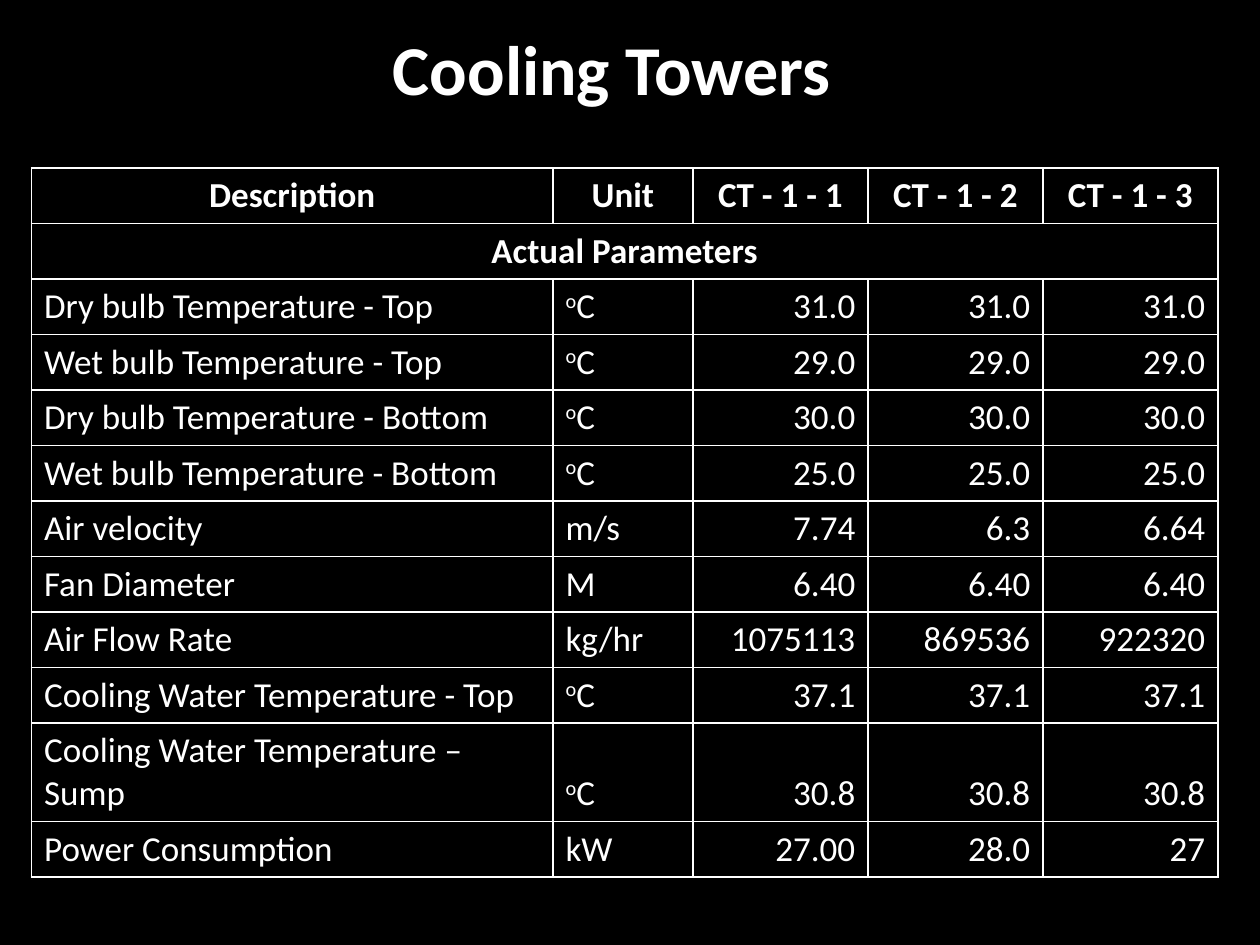
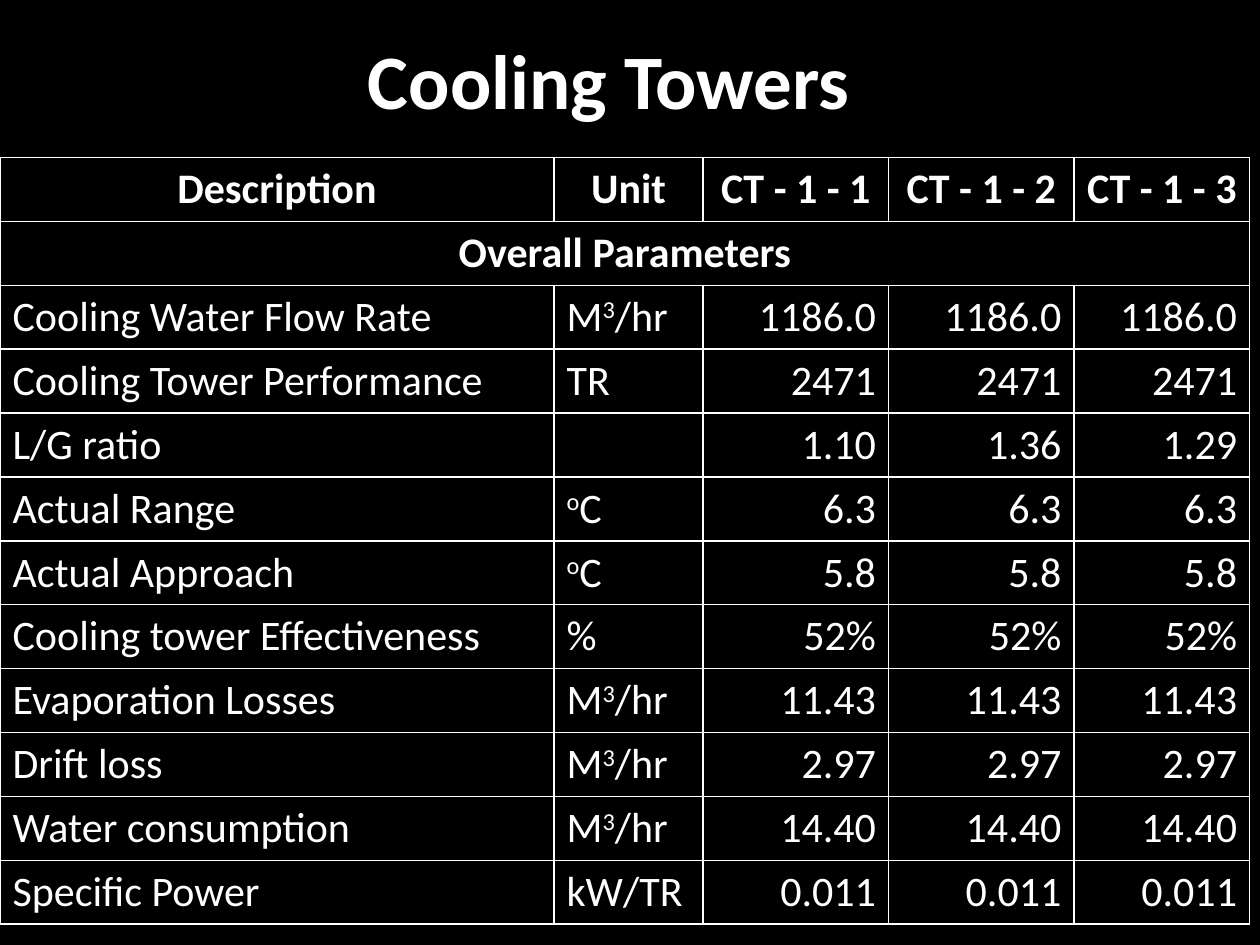
from lxml.etree import SubElement
from pptx import Presentation
from pptx.dml.color import RGBColor
from pptx.enum.text import MSO_ANCHOR as Anchor, MSO_AUTO_SIZE as AutoSize, PP_ALIGN as Align
from pptx.oxml.ns import qn
from pptx.util import Pt

# Shared look
FONT, INK, GROUND = "Calibri", "FFFFFF", "000000"
SLIDE_WIDTH, SLIDE_HEIGHT = 720, 540
TITLE_ONLY = 5
CELL_PADDING = 7.2
LINE_FACTOR = 1.22

# Table content: text between carets is superscript
HEADINGS = ["Description", "Unit", "CT - 1 - 1", "CT - 1 - 2", "CT - 1 - 3"]
DEGREES, VOLUME_RATE = "^o^C", "M^3^/hr"
ACTUAL = [
    ("Dry bulb Temperature - Top", DEGREES, "31.0", "31.0", "31.0"),
    ("Wet bulb Temperature - Top", DEGREES, "29.0", "29.0", "29.0"),
    ("Dry bulb Temperature - Bottom", DEGREES, "30.0", "30.0", "30.0"),
    ("Wet bulb Temperature - Bottom", DEGREES, "25.0", "25.0", "25.0"),
    ("Air velocity", "m/s", "7.74", "6.3", "6.64"),
    ("Fan Diameter", "M", "6.40", "6.40", "6.40"),
    ("Air Flow Rate", "kg/hr", "1075113", "869536", "922320"),
    ("Cooling Water Temperature - Top", DEGREES, "37.1", "37.1", "37.1"),
    ("Cooling Water Temperature –\nSump", DEGREES, "30.8", "30.8", "30.8"),
    ("Power Consumption", "kW", "27.00", "28.0", "27"),
]
OVERALL = [
    ("Cooling Water Flow Rate", VOLUME_RATE, "1186.0", "1186.0", "1186.0"),
    ("Cooling Tower Performance", "TR", "2471", "2471", "2471"),
    ("L/G ratio", "", "1.10", "1.36", "1.29"),
    ("Actual Range", DEGREES, "6.3", "6.3", "6.3"),
    ("Actual Approach", DEGREES, "5.8", "5.8", "5.8"),
    ("Cooling tower Effectiveness", "%", "52%", "52%", "52%"),
    ("Evaporation Losses", VOLUME_RATE, "11.43", "11.43", "11.43"),
    ("Drift loss", VOLUME_RATE, "2.97", "2.97", "2.97"),
    ("Water consumption", VOLUME_RATE, "14.40", "14.40", "14.40"),
    ("Specific Power", "kW/TR", "0.011", "0.011", "0.011"),
]


def paint(fill, color):
    fill.solid()
    fill.fore_color.rgb = RGBColor.from_string(color)


def write(frame, text, size, color=INK, bold=False, align=Align.LEFT):
    """Fill a text frame, one paragraph per line of text."""
    for number, line in enumerate(text.split("\n")):
        paragraph = frame.add_paragraph() if number else frame.paragraphs[0]
        paragraph.alignment = align
        paragraph.font.size = Pt(size)
        for position, part in enumerate(line.split("^")):
            if not part:
                continue
            run = paragraph.add_run()
            run.text = part
            run.font.name, run.font.size, run.font.bold = FONT, Pt(size), bold
            run.font.color.rgb = RGBColor.from_string(color)
            if position % 2:
                run.font._element.set("baseline", "30000")


def add_title(slide, text, height, size, right_inset):
    title = slide.shapes.title
    title.left, title.top = Pt(0), Pt(0)
    title.width, title.height = Pt(SLIDE_WIDTH), Pt(height)
    frame = title.text_frame
    frame.auto_size = AutoSize.NONE
    frame.vertical_anchor = Anchor.MIDDLE
    frame.margin_right = Pt(right_inset)
    write(frame, text, size, bold=True, align=Align.CENTER)


def rule_cell(cell, color=INK, width=1):
    """Draw a line on all four sides of a cell."""
    properties = cell._tc.get_or_add_tcPr()
    for side in ("a:lnL", "a:lnR", "a:lnT", "a:lnB"):
        line = SubElement(properties, qn(side), w=str(Pt(width)))
        SubElement(SubElement(line, qn("a:solidFill")), qn("a:srgbClr"), val=color)


def add_parameter_table(slide, left, top, widths, size, section, records):
    rows = [HEADINGS, [section] + [""] * (len(HEADINGS) - 1), *records]
    heights = [LINE_FACTOR * size * (row[0].count("\n") + 1) + CELL_PADDING for row in rows]
    table = slide.shapes.add_table(len(rows), len(widths), Pt(left), Pt(top),
                                   Pt(sum(widths)), Pt(sum(heights))).table
    table.first_row = table.horz_banding = False
    for column, width in zip(table.columns, widths):
        column.width = Pt(width)
    table.cell(1, 0).merge(table.cell(1, len(widths) - 1))

    for r, (row, height) in enumerate(zip(rows, heights)):
        table.rows[r].height = Pt(height)
        is_heading = r < 2
        for c, text in enumerate(row):
            cell = table.cell(r, c)
            rule_cell(cell)
            paint(cell.fill, GROUND)
            cell.vertical_anchor = Anchor.BOTTOM if r else Anchor.TOP
            align = Align.CENTER if is_heading else Align.RIGHT if c > 1 else Align.LEFT
            write(cell.text_frame, text, size, bold=is_heading, align=align)


def add_tower_slide(deck, title, table):
    slide = deck.slides.add_slide(deck.slide_layouts[TITLE_ONLY])
    add_title(slide, "Cooling Towers", **title)
    add_parameter_table(slide, **table)


def main():
    deck = Presentation()
    deck.slide_width, deck.slide_height = Pt(SLIDE_WIDTH), Pt(SLIDE_HEIGHT)
    paint(deck.slide_master.background.fill, GROUND)

    # Measured conditions
    add_tower_slide(
        deck,
        title=dict(height=77, size=40, right_inset=28),
        table=dict(left=18, top=96, widths=[298, 80, 100, 100, 100], size=20,
                   section="Actual Parameters", records=ACTUAL))

    # Resulting performance
    add_tower_slide(
        deck,
        title=dict(height=90, size=44, right_inset=31),
        table=dict(left=0, top=90, widths=[316.6, 85.2, 106, 106, 100.4], size=24,
                   section="Overall Parameters", records=OVERALL))

    deck.save("out.pptx")


if __name__ == "__main__":
    main()
